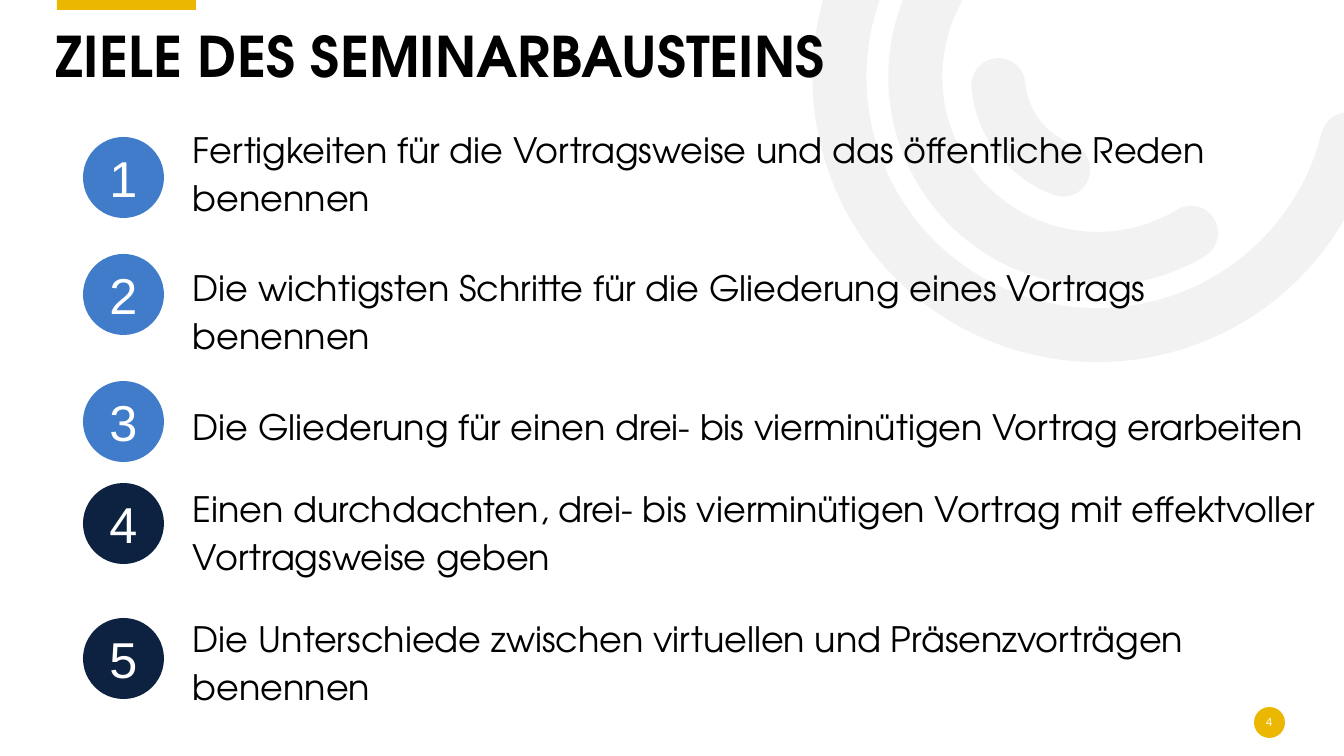
from math import cos, radians, sin

from lxml.etree import SubElement
from pptx import Presentation
from pptx.dml.color import RGBColor
from pptx.enum.shapes import MSO_SHAPE
from pptx.enum.text import MSO_ANCHOR, PP_ALIGN
from pptx.oxml.ns import qn
from pptx.util import Pt

PX = 914400 / 100.8
BLACK = RGBColor(0x00, 0x00, 0x00)
WHITE = RGBColor(0xFF, 0xFF, 0xFF)
GOLD = RGBColor(0xEB, 0xB7, 0x00)
BLUE = RGBColor(0x40, 0x7C, 0xCA)
NAVY = RGBColor(0x0D, 0x22, 0x40)
PALE = RGBColor(0xF2, 0xF2, 0xF2)
HEADING_FONT = "TeX Gyre Adventor"

prs = Presentation()
prs.slide_width = round(1344 * PX)
prs.slide_height = round(756 * PX)
s = prs.slides.add_slide(prs.slide_layouts[6])


def paint(sp, color):
    sp.shadow.inherit = False
    sp.fill.solid()
    sp.fill.fore_color.rgb = color
    sp.line.fill.background()


def set_text(sp, lines, font, size, color, align, anchor, inset=None, bold=False):
    tf = sp.text_frame
    tf.word_wrap = True
    tf.vertical_anchor = anchor
    if inset is not None:
        tf.margin_left = tf.margin_right = tf.margin_top = tf.margin_bottom = inset
    tf.text = "\n".join(lines)
    for p in tf.paragraphs:
        p.alignment = align
        for r in p.runs:
            r.font.name = font
            r.font.size = Pt(size)
            r.font.bold = bold
            r.font.color.rgb = color
    return tf


CENTER_X, CENTER_Y, HALF_BAND = 1097, 77, 27
for middle, start, end in [(258, 14, 212), (182, 59, 220), (99, 110, 175)]:
    outer, inner = middle + HALF_BAND, middle - HALF_BAND
    left, right = CENTER_X - outer, CENTER_X + outer
    top, bottom = CENTER_Y - outer, CENTER_Y + outer
    fb = s.shapes.build_freeform(left, top, scale=PX)
    fb.add_line_segments([(right, top), (right, bottom), (left, bottom)])
    sp = fb.convert_to_shape()
    paint(sp, PALE)
    outline = next(sp.element.iter(qn("a:path")))
    for child in list(outline):
        outline.remove(child)
    move = SubElement(outline, qn("a:moveTo"))
    SubElement(move, qn("a:pt"),
               x=str(round(outer + outer * cos(radians(start)))),
               y=str(round(outer + outer * sin(radians(start)))))
    sweep = end - start
    for radius, angle, swing in [
        (outer, start, sweep),
        (HALF_BAND, end, 180),
        (inner, end, -sweep),
        (HALF_BAND, start + 180, 180),
    ]:
        SubElement(outline, qn("a:arcTo"), wR=str(radius), hR=str(radius),
                   stAng=str(angle % 360 * 60000), swAng=str(swing * 60000))
    SubElement(outline, qn("a:close"))

bar = s.shapes.add_shape(MSO_SHAPE.RECTANGLE, *[round(v * PX) for v in (57, -2, 139, 12)])
paint(bar, GOLD)
badge = s.shapes.add_shape(MSO_SHAPE.OVAL, *[round(v * PX) for v in (1254, 707, 31, 31)])
paint(badge, GOLD)
page = s.shapes.add_textbox(*[round(v * PX) for v in (1253, 712, 32, 20)])
tf = set_text(page, ["4"], "Calibri", 9, WHITE, PP_ALIGN.CENTER, MSO_ANCHOR.MIDDLE, 0)
tf.paragraphs[0].space_after = Pt(6)

goals = [
    ("Fertigkeiten für die Vortragsweise und das öffentliche Reden benennen", 18, 137, BLUE),
    ("Die wichtigsten Schritte für die Gliederung eines Vortrags benennen", 18, 254, BLUE),
    ("Die Gliederung für einen drei- bis vierminütigen Vortrag erarbeiten", 12, 381, BLUE),
    ("Einen durchdachten, drei- bis vierminütigen Vortrag mit effektvoller "
     "Vortragsweise geben", 12, 483, NAVY),
    ("Die Unterschiede zwischen virtuellen und Präsenzvorträgen benennen", 12, 618, NAVY),
]
body = s.shapes.add_textbox(*[round(v * PX) for v in (183, 117, 1146, 562)])
tf = set_text(body, [goal[0] for goal in goals], HEADING_FONT, 25, BLACK,
              PP_ALIGN.LEFT, MSO_ANCHOR.TOP)
for i, (p, goal) in enumerate(zip(tf.paragraphs, goals)):
    p.line_spacing = 1.15
    p.space_before = Pt(12 if i else 0)
    p.space_after = Pt(goal[1])

title = s.shapes.add_textbox(*[round(v * PX) for v in (56, -12, 1229, 102)])
tf = set_text(title, ["ZIELE DES SEMINARBAUSTEINS"], HEADING_FONT, 40, BLACK,
              PP_ALIGN.LEFT, MSO_ANCHOR.BOTTOM, 0, True)
tf.paragraphs[0].line_spacing = 0.9

for number, (_, _, y, color) in enumerate(goals, 1):
    sp = s.shapes.add_shape(MSO_SHAPE.OVAL, *[round(v * PX) for v in (83, y, 81, 81)])
    paint(sp, color)
    set_text(sp, [str(number)], "Arial", 36, WHITE, PP_ALIGN.CENTER, MSO_ANCHOR.MIDDLE)

prs.save("out.pptx")
